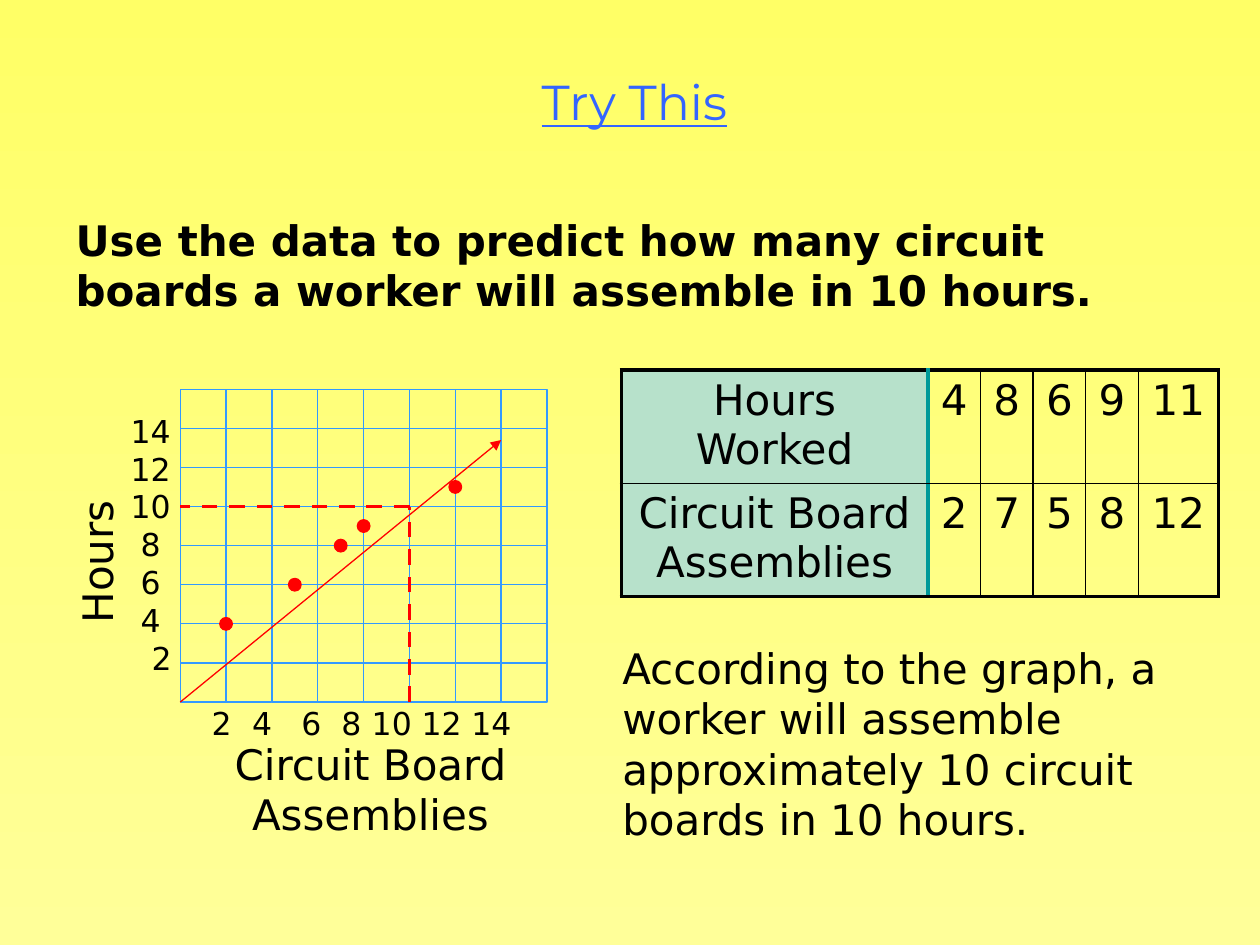
"""Build the "Try This" slide with a scatter graph and its data table."""
from dataclasses import dataclass

from lxml.etree import SubElement
from pptx import Presentation
from pptx.dml.color import RGBColor as RGB
from pptx.enum.dml import MSO_LINE_DASH_STYLE as DASH
from pptx.enum.shapes import MSO_CONNECTOR as CONN, MSO_SHAPE as SHAPE
from pptx.enum.text import MSO_ANCHOR as ANCHOR, MSO_AUTO_SIZE as AUTO, PP_ALIGN as ALIGN
from pptx.oxml.ns import qn
from pptx.util import Pt


@dataclass(frozen=True)
class Theme:
    font: str = "DejaVu Sans"
    title_font: str = "Montserrat"
    title_size: int = 28
    text_size: int = 24
    axis_size: int = 18
    leading: float = 1.2
    thin: float = 0.75
    rule: float = 1
    thick: float = 2.25
    ink: str = "000000"
    link: str = "3365FF"
    grid: str = "3399FF"
    mark: str = "FF0000"
    header: str = "B7E1CB"
    divider: str = "009999"
    sky: tuple = ("FFFF66", "FFFF99")


class SlideBuilder:
    def __init__(self, prs, theme):
        self.t = theme
        self.s = prs.slides.add_slide(prs.slide_layouts[1])

    def background(self):
        fill = self.s.background.fill
        fill.gradient()
        fill.gradient_angle = 270
        for stop, color in zip(fill.gradient_stops, self.t.sky):
            stop.color.rgb = RGB.from_string(color)

    def font(self, p, size, name=None, color=None, bold=False, underline=False):
        for r in p.runs:
            f = r.font
            f.name, f.size, f.bold, f.underline = name or self.t.font, Pt(size), bold, underline
            f.color.rgb = RGB.from_string(color or self.t.ink)

    def fill_text(self, sp, box, text, size, align=ALIGN.LEFT, **style):
        sp.left, sp.top, sp.width, sp.height = map(Pt, box)
        tf = sp.text_frame
        tf.word_wrap, tf.auto_size = True, AUTO.NONE
        tf.text = text
        for p in tf.paragraphs:
            p.alignment = align
            p.space_before = Pt(0)
            p.line_spacing = Pt(size * self.t.leading)
            self.font(p, size, **style)
        return sp

    def title(self, box, text):
        sp = self.fill_text(self.s.shapes.title, box, text, self.t.title_size, ALIGN.CENTER,
                            name=self.t.title_font, color=self.t.link, underline=True)
        sp.text_frame.vertical_anchor = ANCHOR.MIDDLE

    def body(self, box, text):
        sp = self.fill_text(self.s.placeholders[1], box, text, self.t.text_size, bold=True)
        pPr = sp.text_frame.paragraphs[0]._p.get_or_add_pPr()
        pPr.set("marL", "0")
        pPr.set("indent", "0")
        SubElement(pPr, qn("a:buNone"))

    def text(self, box, text, size, align=ALIGN.LEFT, rotation=0):
        sp = self.s.shapes.add_textbox(0, 0, 0, 0)
        sp.rotation = rotation
        return self.fill_text(sp, box, text, size, align)

    def tabbed_text(self, box, labels, size, stops):
        sp = self.text(box, "\t".join(labels), size)
        tabs = SubElement(sp.text_frame.paragraphs[0]._p.get_or_add_pPr(), qn("a:tabLst"))
        for stop in stops:
            SubElement(tabs, qn("a:tab"), pos=str(Pt(stop)), algn="ctr")

    def shape(self, shapes, kind, box, line, fill=None):
        sp = shapes.add_shape(kind, *map(Pt, box))
        sp.shadow.inherit = False
        sp.line.color.rgb = RGB.from_string(line)
        sp.line.width = Pt(self.t.thin)
        if fill:
            sp.fill.solid()
            sp.fill.fore_color.rgb = RGB.from_string(fill)
        else:
            sp.fill.background()

    def grid(self, left, top, dx, dy, count):
        shapes = self.s.shapes.add_group_shape().shapes
        for row in range(count):
            for col in range(count):
                self.shape(shapes, SHAPE.RECTANGLE,
                           (left + col * dx, top + row * dy, dx, dy), self.t.grid)

    def dot(self, x, y, size=7.2):
        box = (x - size / 2, y - size / 2, size, size)
        self.shape(self.s.shapes, SHAPE.OVAL, box, self.t.mark, self.t.mark)

    def line(self, start, end, width, dashed=False, arrow=False):
        sp = self.s.shapes.add_connector(CONN.STRAIGHT, *map(Pt, (*start, *end)))
        sp.line.color.rgb = RGB.from_string(self.t.mark)
        sp.line.width = Pt(width)
        if dashed:
            sp.line.dash_style = DASH.DASH
        if arrow:
            SubElement(sp.line._get_or_add_ln(), qn("a:tailEnd"), type="triangle")
        SubElement(sp._element.spPr, qn("a:effectLst"))

    def borders(self, cell, sides):
        tcPr = cell._tc.get_or_add_tcPr()
        for i, (side, (color, width)) in enumerate(sides.items()):
            ln = tcPr.makeelement(qn(f"a:ln{side}"), {"w": str(Pt(width))})
            SubElement(SubElement(ln, qn("a:solidFill")), qn("a:srgbClr"), val=color)
            tcPr.insert(i, ln)

    def table(self, left, top, widths, row_height, rows):
        t = self.t
        last_row, last_col = len(rows) - 1, len(widths) - 1
        frame = self.s.shapes.add_table(len(rows), len(widths), Pt(left), Pt(top),
                                        Pt(sum(widths)), Pt(row_height * len(rows)))
        tbl = frame.table
        tbl.first_row = tbl.horz_banding = False
        inner, outer, split = (t.ink, t.rule), (t.ink, t.thick), (t.divider, t.thick)
        for col, width in zip(tbl.columns, widths):
            col.width = Pt(width)
        for i, row in enumerate(rows):
            tbl.rows[i].height = Pt(row_height)
            for j, value in enumerate(row):
                cell = tbl.cell(i, j)
                cell.text = str(value)
                p = cell.text_frame.paragraphs[0]
                p.alignment = ALIGN.CENTER
                self.font(p, t.text_size)
                if j == 0:
                    cell.fill.solid()
                    cell.fill.fore_color.rgb = RGB.from_string(t.header)
                else:
                    cell.fill.background()
                self.borders(cell, {
                    "L": {0: outer, 1: split}.get(j, inner),
                    "R": {0: split, last_col: outer}.get(j, inner),
                    "T": outer if i == 0 else inner,
                    "B": outer if i == last_row else inner,
                })


def main():
    prs = Presentation()
    prs.slide_width, prs.slide_height = Pt(720), Pt(540)
    t = Theme()
    b = SlideBuilder(prs, t)
    hours, boards = (4, 8, 6, 9, 11), (2, 7, 5, 8, 12)
    left, top, dx, dy, count = 103, 222.4, 26.2, 22.35, 8

    def at(x, y):
        return left + x * dx / 2, top + count * dy - y * dy / 2

    b.background()
    b.body((36, 118.8, 648.7, 64.8),
           "Use the data to predict how many circuit boards a worker will assemble in 10 hours.")
    b.title((5, 37.4, 715, 41), "Try This")
    b.text((348.5, 363.6, 353.5, 122.4),
           "According to the graph, a worker will assemble approximately 10 circuit boards "
           "in 10 hours.", t.text_size)
    b.table(355, 211.4, (175.2, 30.1, 30.1, 30.1, 30.1, 45.8), 64.8,
            (("Hours Worked", *hours), ("Circuit Board Assemblies", *boards)))

    b.grid(left, top, dx, dy, count)
    ticks = [str(n) for n in range(2, 15, 2)]
    scale = b.text((67, 231.8, 38.2, 158.4), "\n".join(reversed(ticks)), t.axis_size, ALIGN.CENTER)
    scale.text_frame.paragraphs[-1].alignment = ALIGN.RIGHT
    b.tabbed_text((113.8, 398.9, 221, 28.8), ticks, t.axis_size, (29, 57, 80, 103, 131.5, 160))
    b.text((4.3, 294.5, 101.5, 36), "Hours", t.text_size, rotation=270)
    b.text((104.4, 418.3, 214.6, 64.8), "Circuit Board Assemblies", t.text_size, ALIGN.CENTER)

    for x, y in zip(boards, hours):
        b.dot(*at(x, y))
    b.line(at(10, 0), at(10, 10), t.thick, dashed=True)
    b.line(at(10, 10), at(0, 10), t.thick, dashed=True)
    b.line(at(0, 0), at(14, 13.4), t.thin, arrow=True)
    prs.save("out.pptx")


if __name__ == "__main__":
    main()
